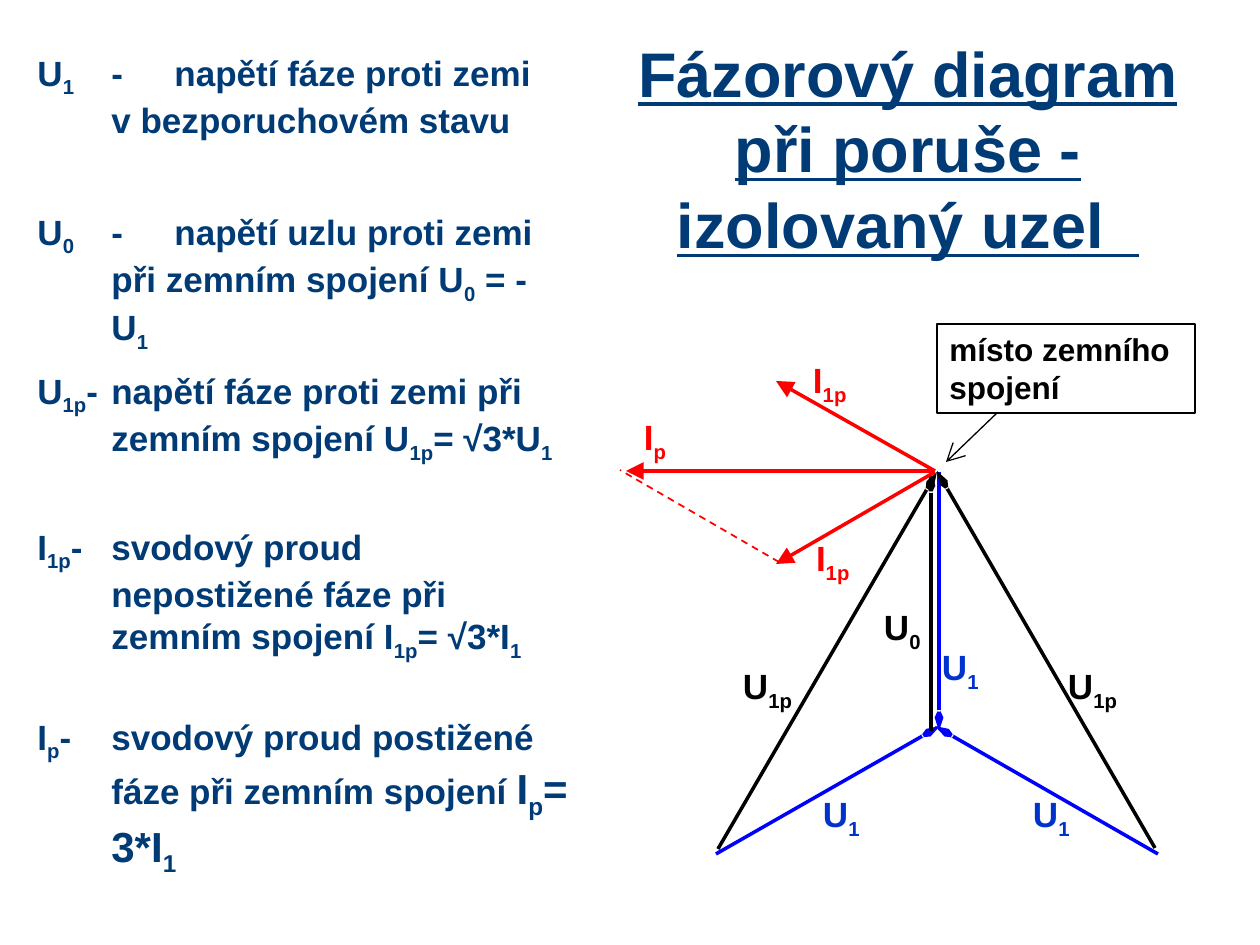
"""Build a slide with the phasor diagram of an earth fault in an isolated network."""
from lxml.etree import SubElement
from pptx import Presentation
from pptx.dml.color import RGBColor
from pptx.enum.dml import MSO_LINE
from pptx.enum.shapes import MSO_CONNECTOR, MSO_SHAPE
from pptx.enum.text import MSO_ANCHOR, MSO_AUTO_SIZE, PP_ALIGN
from pptx.oxml.ns import qn
from pptx.util import Emu, Pt

NAVY, BLUE, LABEL_BLUE, RED, BLACK = "003B76", "0000FF", "0033CC", "FF0000", "000000"
GROW = MSO_AUTO_SIZE.SHAPE_TO_FIT_TEXT


def px(length):
    """Convert whole pixels to EMU."""
    return Emu(round(length * 914400 / 126))


def write_text(shape, pieces, color, frame_format, font_format=None):
    """Write sized pieces in which underscores enclose subscripts."""
    frame = shape.text_frame
    for name, value in frame_format.items():
        setattr(frame, name, value)
    paragraph = frame.paragraphs[0]
    for text, size in pieces:
        for index, part in enumerate(text.split("_")):
            if not part:
                continue
            run = paragraph.add_run()
            run.text = part
            values = {"name": "Arial", "size": Pt(size), "bold": True, **(font_format or {})}
            for name, value in values.items():
                setattr(run.font, name, value)
            run.font.color.rgb = RGBColor.from_string(color)
            if index % 2:
                run._r.get_or_add_rPr().set("baseline", "-25000")
    return paragraph


presentation = Presentation()
presentation.slide_width, presentation.slide_height = px(1260), px(945)
slide = presentation.slides.add_slide(presentation.slide_layouts[5])
shapes = slide.shapes

title = shapes.title
title.left, title.top, title.width, title.height = px(620), px(16), px(576), px(263)
title_format = {"vertical_anchor": MSO_ANCHOR.MIDDLE, "word_wrap": True, "auto_size": MSO_AUTO_SIZE.NONE}
title_text = "Fázorový diagram při poruše - izolovaný uzel  "
paragraph = write_text(title, [(title_text, 36)], NAVY, title_format, {"underline": True})
paragraph.alignment = PP_ALIGN.CENTER

slim_arrow = {"type": "arrow", "w": "sm", "len": "lg"}
open_arrow = {"type": "arrow", "w": "lg", "len": "lg"}
full_arrow = {"type": "triangle", "w": "lg", "len": "lg"}
lines = [
    ((939, 472, 939, 731), BLUE, 2, slim_arrow),
    ((1158, 854, 935, 726), BLUE, 2, slim_arrow),
    ((716, 854, 940, 726), BLUE, 2, slim_arrow),
    ((931, 731, 931, 472), BLACK, 2, slim_arrow),
    ((718, 849, 937, 472), BLACK, 2, slim_arrow),
    ((1155, 848, 937, 471), BLACK, 2, slim_arrow),
    ((935, 471, 776, 381), RED, 2, full_arrow),
    ((935, 472, 776, 564), RED, 2, full_arrow),
    ((779, 562, 620, 470), RED, 1, None),
    ((935, 471, 626, 471), RED, 2, full_arrow),
    ((997, 413, 946, 462), BLACK, 0.75, open_arrow),
]
for ends, color, width, arrow in lines:
    connector = shapes.add_connector(MSO_CONNECTOR.STRAIGHT, *map(px, ends))
    connector.line.color.rgb = RGBColor.from_string(color)
    connector.line.width = Pt(width)
    if arrow:
        SubElement(connector.line._get_or_add_ln(), qn("a:tailEnd"), arrow)
    else:
        connector.line.dash_style = MSO_LINE.DASH
    SubElement(connector._element.spPr, qn("a:effectLst"))

label_format = {"word_wrap": False, "auto_size": GROW}
label_format.update({f"margin_{side}": px(5) for side in ("left", "top", "right", "bottom")})
labels = [
    ("U_0_", 879, 601, 48, BLACK),
    ("U_1p_", 1063, 660, 62, BLACK),
    ("U_1p_", 738, 660, 62, BLACK),
    ("I_1p_", 808, 354, 47, RED),
    ("I_1p_", 811, 532, 47, RED),
    ("I_p_", 639, 411, 34, RED),
    ("U_1_", 937, 641, 48, LABEL_BLUE),
    ("U_1_", 1028, 788, 48, LABEL_BLUE),
    ("U_1_", 818, 788, 48, LABEL_BLUE),
]
for text, left, top, width, color in labels:
    label = shapes.add_textbox(px(left), px(top), px(width), px(52))
    write_text(label, [(text, 20)], color, label_format)

definitions = [
    (45, 525, 101, [("U_1_\t-\tnapětí fáze proti zemi v bezporuchovém stavu", 20)]),
    (204, 525, 101, [("U_0_\t-\tnapětí uzlu proti zemi při zemním spojení U_0_ = - U_1_", 20)]),
    (363, 556, 101, [("U_1p_-\tnapětí fáze proti zemi při zemním spojení U_1p_= √3*U_1_", 20)]),
    (519, 556, 142, [("I_1p_-\tsvodový proud nepostižené fáze při zemním spojení I_1p_= √3*I_1_", 20)]),
    (709, 556, 150, [("I_p_-\tsvodový proud postižené fáze při zemním spojení ", 20), ("I_p_= 3*I_1_", 24)]),
]
for top, width, height, pieces in definitions:
    definition = shapes.add_textbox(px(25), px(top), px(width), px(height))
    paragraph = write_text(definition, pieces, NAVY, {"word_wrap": True, "auto_size": GROW})
    properties = paragraph._p.get_or_add_pPr()
    properties.set("marL", str(px(74)))
    properties.set("indent", str(px(-74)))
    tab_list = SubElement(properties, qn("a:tabLst"))
    for position in (0, 168):
        SubElement(tab_list, qn("a:tab"), {"pos": str(px(position)), "algn": "l"})

fault_note = shapes.add_shape(MSO_SHAPE.RECTANGLE, px(937), px(324), px(258), px(89))
fault_note.shadow.inherit = False
fault_note.fill.background()
fault_note.line.color.rgb = RGBColor.from_string(BLACK)
fault_note.line.width = Pt(0.75)
note_format = {"word_wrap": True, "auto_size": GROW, "vertical_anchor": MSO_ANCHOR.TOP}
paragraph = write_text(fault_note, [("místo zemního spojení", 18)], BLACK, note_format)
paragraph.alignment = PP_ALIGN.LEFT

presentation.save("out.pptx")
